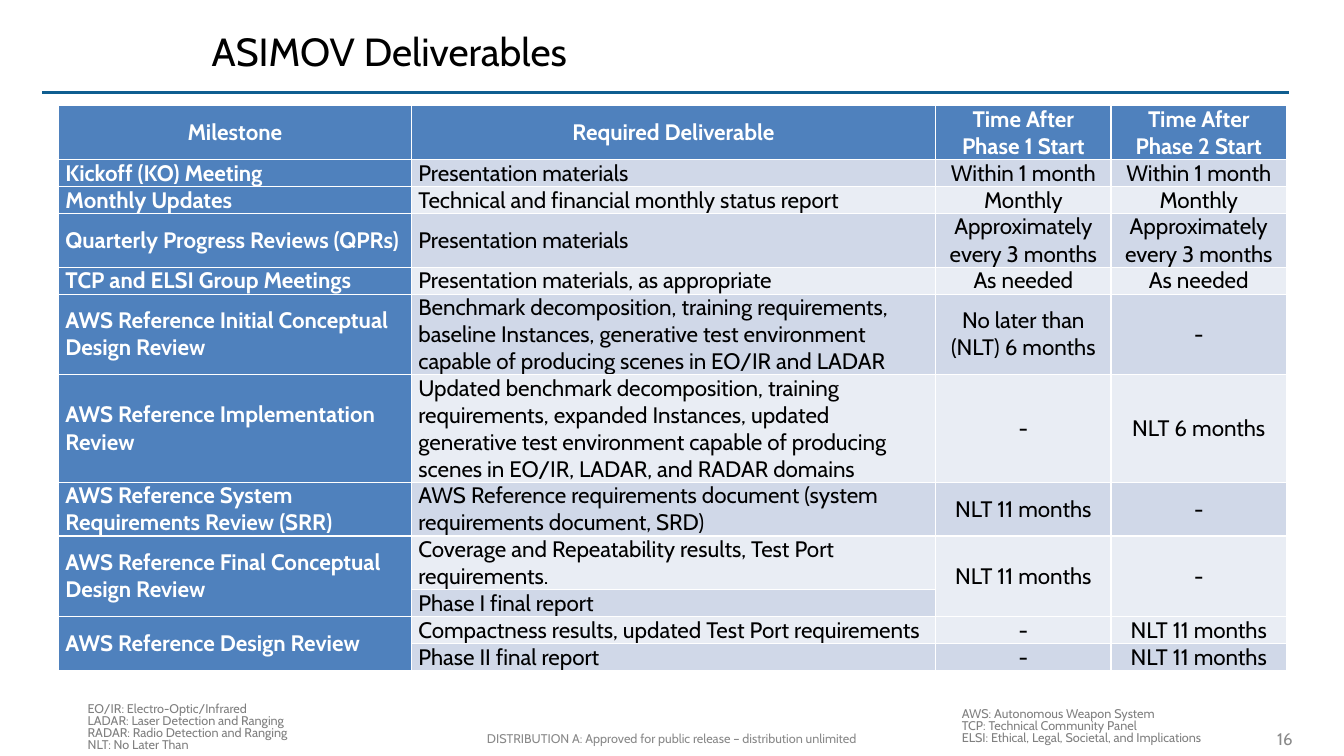
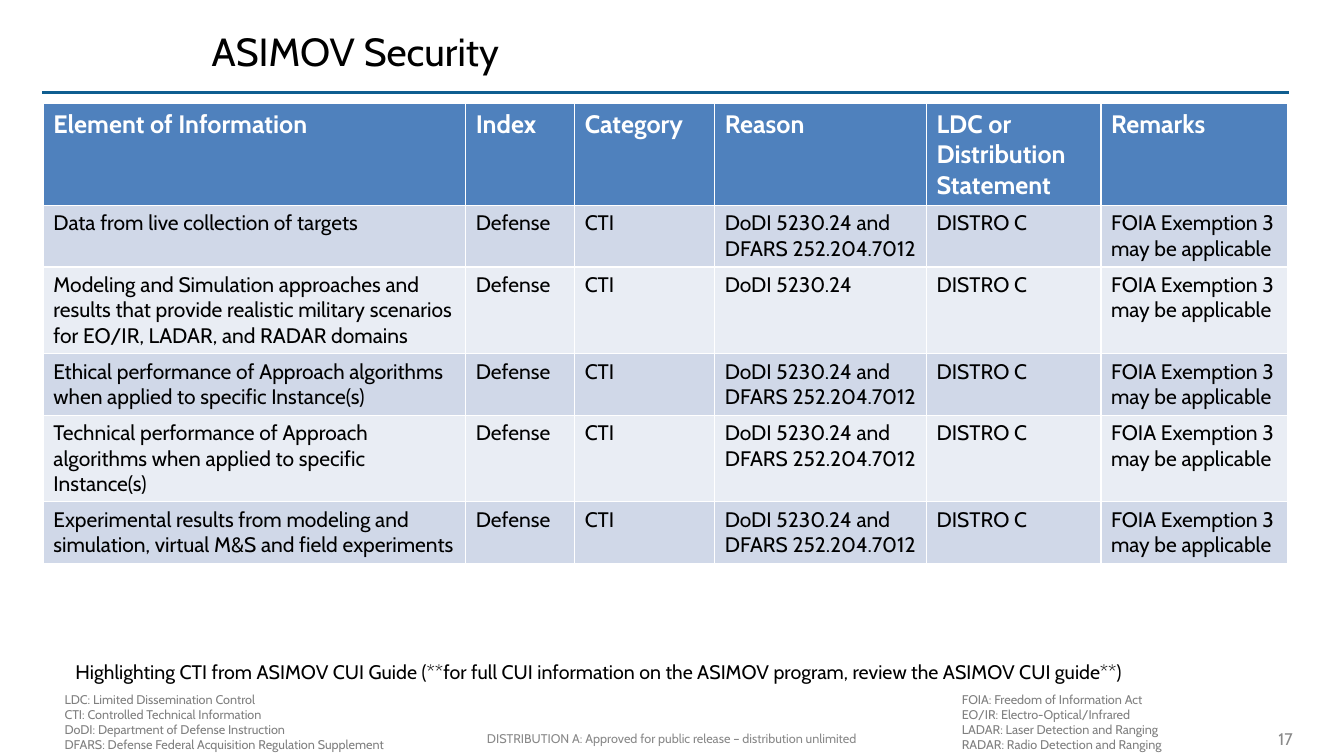
from lxml import etree
from pptx import Presentation
from pptx.dml.color import RGBColor
from pptx.enum import shapes, text
from pptx.oxml import ns
from pptx.util import Inches, Pt

FONT = "Cabin"
BLACK = RGBColor(0x00, 0x00, 0x00)
WHITE = RGBColor(0xFF, 0xFF, 0xFF)
RULE_BLUE = RGBColor(0x0F, 0x5E, 0x90)
HEADER_BLUE = RGBColor(0x4F, 0x81, 0xBD)
BANDS = [RGBColor(0xD0, 0xD8, 0xE8), RGBColor(0xE9, 0xED, 0xF4)]
FOOTER_GRAY = RGBColor(0x89, 0x89, 0x89)
NOTE_GRAY = RGBColor(0x80, 0x80, 0x80)

LEFT, CENTER, RIGHT = text.PP_ALIGN.LEFT, text.PP_ALIGN.CENTER, text.PP_ALIGN.RIGHT
TOP, MIDDLE = text.MSO_ANCHOR.TOP, text.MSO_ANCHOR.MIDDLE


def write(frame, lines, size, color, align=LEFT, anchor=TOP, bold=False, spacing=1.0):
    """Fill a text frame with one paragraph per line."""
    frame.word_wrap = True
    frame.vertical_anchor = anchor
    for number, line in enumerate(lines):
        paragraph = frame.add_paragraph() if number else frame.paragraphs[0]
        paragraph.alignment = align
        paragraph.line_spacing = spacing
        run = paragraph.add_run()
        run.text = line
        run.font.name = FONT
        run.font.size = Pt(size)
        run.font.bold = bold
        run.font.color.rgb = color


def add_text(slide, box, lines, size, color, **style):
    frame = slide.shapes.add_textbox(*map(Inches, box)).text_frame
    write(frame, lines, size, color, **style)
    return frame


deliverables = [
    ["Milestone", "Required Deliverable", "Time After Phase 1 Start", "Time After Phase 2 Start"],
    ["Kickoff (KO) Meeting", "Presentation materials", "Within 1 month", "Within 1 month"],
    ["Monthly Updates", "Technical and financial monthly status report", "Monthly", "Monthly"],
    ["Quarterly Progress Reviews (QPRs)", "Presentation materials",
     "Approximately every 3 months", "Approximately every 3 months"],
    ["TCP and ELSI Group Meetings", "Presentation materials, as appropriate",
     "As needed", "As needed"],
    ["AWS Reference Initial Conceptual Design Review",
     "Benchmark decomposition, training requirements, baseline Instances, generative test "
     "environment capable of producing scenes in EO/IR and LADAR",
     "No later than (NLT) 6 months", "-"],
    ["AWS Reference Implementation Review",
     "Updated benchmark decomposition, training requirements, expanded Instances, updated "
     "generative test environment capable of producing scenes in EO/IR, LADAR, and RADAR domains",
     "-", "NLT 6 months"],
    ["AWS Reference System Requirements Review (SRR)",
     "AWS Reference requirements document (system requirements document, SRD)",
     "NLT 11 months", "-"],
    ["AWS Reference Final Conceptual Design Review",
     "Coverage and Repeatability results, Test Port requirements.", "NLT 11 months", "-"],
    [None, "Phase I final report", None, None],
    ["AWS Reference Design Review", "Compactness results, updated Test Port requirements",
     "-", "NLT 11 months"],
    [None, "Phase II final report", "-", "NLT 11 months"],
]

both_rules = "DoDI 5230.24 and DFARS 252.204.7012"
elements = [
    ("Data from live collection of targets", both_rules),
    ("Modeling and Simulation approaches and results that provide realistic military scenarios "
     "for EO/IR, LADAR, and RADAR domains", "DoDI 5230.24"),
    ("Ethical performance of Approach algorithms when applied to specific Instance(s)", both_rules),
    ("Technical performance of Approach algorithms when applied to specific Instance(s)", both_rules),
    ("Experimental results from modeling and simulation, virtual M&S and field experiments",
     both_rules),
]
security = [["Element of Information", "Index", "Category", "Reason",
             "LDC or Distribution Statement", "Remarks"]]
for element, reason in elements:
    security.append([element, "Defense", "CTI", reason, "DISTRO C",
                     "FOIA Exemption 3 may be applicable"])

pages = [
    {
        "title": "ASIMOV Deliverables", "number": "16",
        "rows": deliverables, "origin": (0.58, 1.05),
        "widths": [3.5, 5.2, 1.74, 1.74],
        "heights": [0.26 * lines for lines in (2, 1, 1, 2, 1, 3, 4, 2, 2, 1, 1, 1)],
        "sizes": (16, 16), "margins": (0.07, 0), "anchor": MIDDLE,
        "milestone_column": True, "centered_from": 2,
        "note_spacing": 0.8,
        "notes": [
            ((0.71, 6.98, 3.2, 0.39), [
                "EO/IR: Electro-Optic/Infrared", "LADAR: Laser Detection and Ranging",
                "RADAR: Radio Detection and Ranging", "NLT: No Later Than"]),
            ((9.38, 7.03, 3.2, 0.25), [
                "AWS: Autonomous Weapon System", "TCP: Technical Community Panel",
                "ELSI: Ethical, Legal, Societal, and Implications"]),
        ],
    },
    {
        "title": "ASIMOV Security", "number": "17",
        "rows": security, "origin": (0.43, 1.03),
        "widths": [4.19, 1.08, 1.39, 2.1, 1.73, 1.85],
        "heights": [1.01, 0.61, 0.86, 0.61, 0.86, 0.61],
        "sizes": (18, 15), "margins": (0.1, 0.05), "anchor": TOP,
        "milestone_column": False, "centered_from": 6,
        "note_spacing": 1.0,
        "notes": [
            ((0.48, 6.86, 4.09, 0.25), [
                "LDC: Limited Dissemination Control", "CTI: Controlled Technical Information",
                "DoDI: Department of Defense Instruction",
                "DFARS: Defense Federal Acquisition Regulation Supplement"]),
            ((9.38, 6.86, 2.66, 0.25), [
                "FOIA: Freedom of Information Act", "EO/IR: Electro-Optical/Infrared",
                "LADAR: Laser Detection and Ranging", "RADAR: Radio Detection and Ranging"]),
        ],
    },
]

presentation = Presentation()
presentation.slide_width = Inches(13.33)
presentation.slide_height = Inches(7.5)

for page in pages:
    slide = presentation.slides.add_slide(presentation.slide_layouts[5])

    # Title, rule and footer
    title = slide.shapes.title
    title.left, title.top, title.width, title.height = map(Inches, (2, 0.17, 10.78, 0.67))
    title.text_frame.auto_size = text.MSO_AUTO_SIZE.NONE
    write(title.text_frame, [page["title"]], 28, BLACK, anchor=MIDDLE)

    rule = slide.shapes.add_connector(
        shapes.MSO_CONNECTOR.STRAIGHT, Inches(0.42), Inches(0.92), Inches(12.78), Inches(0.92))
    rule.line.color.rgb = RULE_BLUE
    rule.line.width = Pt(1.75)
    etree.SubElement(rule.element.spPr, ns.qn("a:effectLst"))

    add_text(slide, (1.94, 7.16, 9.44, 0.33),
             ["DISTRIBUTION A: Approved for public release – distribution unlimited"],
             9, FOOTER_GRAY, align=CENTER, anchor=MIDDLE)
    add_text(slide, (11.81, 7.17, 1.11, 0.32), [page["number"]],
             12, FOOTER_GRAY, align=RIGHT, anchor=MIDDLE)

    # Table
    rows, widths, heights = page["rows"], page["widths"], page["heights"]
    box = (*page["origin"], sum(widths), sum(heights))
    table = slide.shapes.add_table(len(rows), len(widths), *map(Inches, box)).table
    for column, width in zip(table.columns, widths):
        column.width = Inches(width)
    for row, height in zip(table.rows, heights):
        row.height = Inches(height)

    header_size, body_size = page["sizes"]
    side, edge = map(Inches, page["margins"])
    for row_index, row in enumerate(rows):
        for column_index, label in enumerate(row):
            cell = table.cell(row_index, column_index)
            is_header = row_index == 0
            is_strong = is_header or (page["milestone_column"] and column_index == 0)
            cell.fill.solid()
            cell.fill.fore_color.rgb = HEADER_BLUE if is_strong else BANDS[(row_index - 1) % 2]
            cell.margin_left = cell.margin_right = side
            cell.margin_top = cell.margin_bottom = edge
            cell.vertical_anchor = page["anchor"]
            if label is None:
                table.cell(row_index - 1, column_index).merge(cell)
                continue
            is_centered = column_index >= page["centered_from"] or (
                is_header and page["milestone_column"])
            write(cell.text_frame, [label], header_size if is_header else body_size,
                  WHITE if is_strong else BLACK, align=CENTER if is_centered else LEFT,
                  anchor=page["anchor"], bold=is_strong)

    # Abbreviations
    for box, lines in page["notes"]:
        frame = add_text(slide, box, lines, 9, NOTE_GRAY, spacing=page["note_spacing"])
        frame.margin_left = Inches(0.16)
        frame.margin_top = frame.margin_bottom = 0

add_text(slide, (0.65, 6.5, 12.02, 0.57),
         ["Highlighting CTI from ASIMOV CUI Guide (**for full CUI information on the ASIMOV "
          "program, review the ASIMOV CUI guide**)"], 14, BLACK)

presentation.save("out.pptx")
